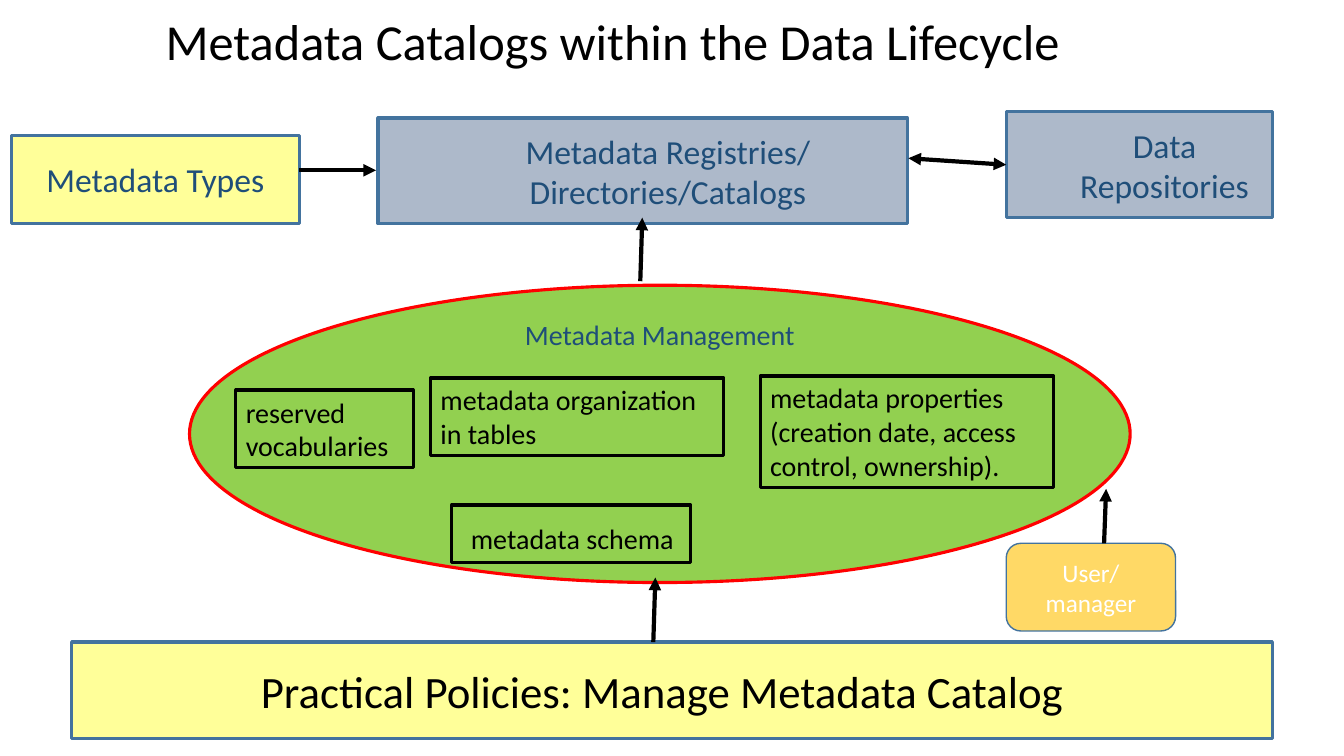
"""Build the slide on metadata catalogs within the data lifecycle."""
import pptx
import pptx.dml.color
import pptx.enum.shapes
import pptx.enum.text
import pptx.oxml
import pptx.oxml.ns
import pptx.util
import lxml.etree

Inches, Pt = pptx.util.Inches, pptx.util.Pt
Kind = pptx.enum.shapes.MSO_SHAPE
Align = pptx.enum.text.PP_ALIGN
Anchor = pptx.enum.text.MSO_ANCHOR
LEFT, MID = Align.LEFT, Align.CENTER
BLUE, NAVY, BLACK = "43739E", "1F4E79", "000000"


def color(code):
    return pptx.dml.color.RGBColor.from_string(code)


def write(shape, text, size, ink, align=MID, indent=0):
    frame = shape.text_frame
    frame.text = text
    frame.word_wrap = True
    frame.auto_size = pptx.enum.text.MSO_AUTO_SIZE.NONE
    frame.vertical_anchor = Anchor.MIDDLE if align == MID else Anchor.TOP
    for para in frame.paragraphs:
        para.alignment = align
        if indent:
            para.level = 1
            para._p.get_or_add_pPr().set("marL", str(Inches(indent)))
        for run in para.runs:
            run.font.name = "Calibri"
            run.font.size = Pt(size)
            run.font.color.rgb = color(ink)


deck = pptx.Presentation()
deck.slide_width, deck.slide_height = Inches(13.33), Inches(7.5)
col, row = deck.slide_width / 100, deck.slide_height / 100
slide = deck.slides.add_slide(deck.slide_layouts[5])

title = slide.shapes.title
title.left, title.top = int(2.55 * col), int(0.6 * row)
title.width, title.height = int(86.1 * col), int(10.53 * row)
write(title, "Metadata Catalogs within the Data Lifecycle", 36, BLACK)
title.text_frame.paragraphs[0].line_spacing = 0.9

boxes = [
    ("oval", Kind.OVAL, 14.1, 37.73, 69.99, 39.33, "92D050", "FF0000", 2.25,
     "Metadata Management", 20, NAVY, MID, 0),
    ("types", Kind.RECTANGLE, 0.83, 17.87, 21.46, 11.73, "FFFF99", BLUE, 2.25,
     "Metadata Types", 24, NAVY, MID, 0),
    ("words", Kind.RECTANGLE, 17.55, 51.6, 13.2, 10.27, None, BLACK, 2.25,
     "reserved\nvocabularies", 20, BLACK, LEFT, 0),
    ("schema", Kind.RECTANGLE, 33.61, 66.8, 17.78, 7.6, None, BLACK, 2.25,
     "metadata schema", 20, BLACK, LEFT, 0),
    ("registry", Kind.RECTANGLE, 28.13, 15.6, 39.38, 14, "ADB9CA", BLUE, 2.25,
     "Metadata Registries/\nDirectories/Catalogs", 24, NAVY, MID, 0.5),
    ("policy", Kind.RECTANGLE, 5.33, 84.93, 89.35, 12.8, "FFFF99", BLUE, 2.25,
     "Practical Policies: Manage Metadata Catalog", 32, BLACK, MID, 0),
    ("tables", Kind.RECTANGLE, 32.03, 50, 21.83, 10.27, None, BLACK, 2.25,
     "metadata organization in tables", 20, BLACK, LEFT, 0),
    ("traits", Kind.RECTANGLE, 56.56, 49.73, 21.83, 14.8, None, BLACK, 2.25,
     "metadata properties (creation date, access control, ownership).",
     20, BLACK, LEFT, 0),
    ("store", Kind.RECTANGLE, 74.87, 14.8, 19.8, 14, "ADB9CA", BLUE, 2.25,
     "Data Repositories", 24, NAVY, MID, 0.5),
    ("user", Kind.ROUNDED_RECTANGLE, 74.87, 71.87, 12.6, 11.6, "FFD966", BLUE, 1,
     "User/\nmanager", 18, "FFFFFF", MID, 0),
]
made = {}
for name, kind, x, y, wide, high, fill, edge, thick, text, size, ink, align, indent in boxes:
    box = slide.shapes.add_shape(
        kind, int(x * col), int(y * row), int(wide * col), int(high * row))
    box.shadow.inherit = False
    if fill:
        box.fill.solid()
        box.fill.fore_color.rgb = color(fill)
    else:
        box.fill.background()
    box.line.color.rgb = color(edge)
    box.line.width = Pt(thick)
    write(box, text, size, ink, align, indent)
    made[name] = box

made["oval"].text_frame.vertical_anchor = Anchor.TOP
made["oval"].text_frame.margin_top = Inches(-0.11)
made["schema"].text_frame.margin_left = Inches(0.19)
made["schema"].text_frame.margin_top = Inches(0.16)
made["policy"].text_frame.margin_right = Inches(0.29)

arrows = [
    (48.61, 84.93, 48.76, 76.4, None),
    (47.64, 37.2, 47.79, 28.8, None),
    (22.28, 22.53, 27.98, 22.53, None),
    (67.59, 20.93, 74.87, 21.8, "store"),
    (82.15, 71.87, 82.3, 64.67, None),
]
for x, y, right, end, goal in arrows:
    arrow = slide.shapes.add_connector(
        pptx.enum.shapes.MSO_CONNECTOR.STRAIGHT,
        int(x * col), int(y * row), int(right * col), int(end * row))
    arrow.line.color.rgb = color(BLACK)
    arrow.line.width = Pt(3)
    tips = ["a:tailEnd"]
    if goal:
        arrow.end_connect(made[goal], 1)
        tips = ["a:headEnd", "a:tailEnd"]
    for tip in tips:
        mark = lxml.etree.SubElement(arrow.line._get_or_add_ln(), pptx.oxml.ns.qn(tip))
        mark.set("type", "triangle")
    lxml.etree.SubElement(arrow._element.spPr, pptx.oxml.ns.qn("a:effectLst"))

deck.save("out.pptx")
